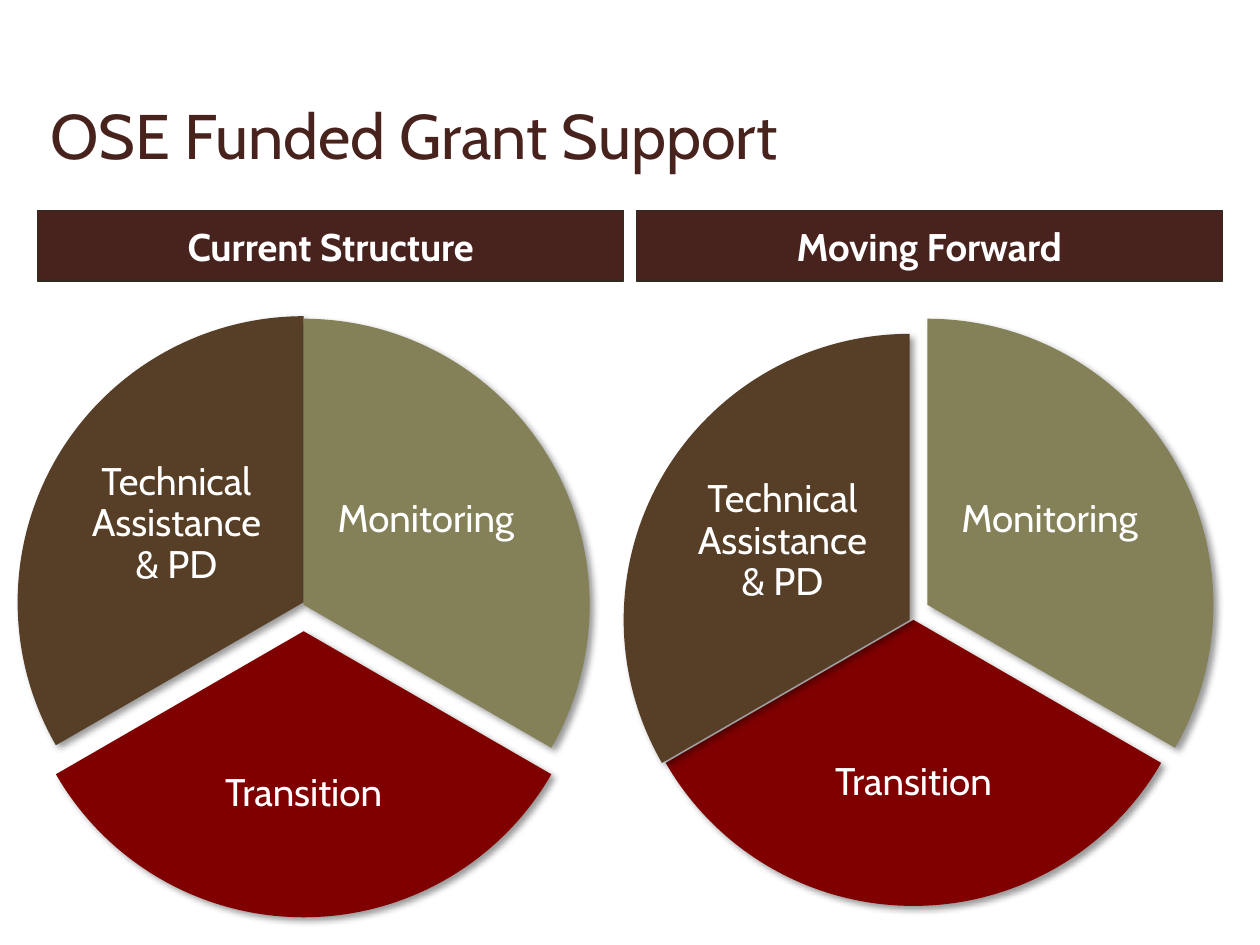
from math import cos, radians, sin, tan

from lxml.etree import SubElement
from pptx import Presentation
from pptx.dml.color import RGBColor
from pptx.enum.text import MSO_ANCHOR, PP_ALIGN
from pptx.oxml.ns import qn
from pptx.util import Inches, Pt

TITLE = "OSE Funded Grant Support"
FONT = "Cabin"
DARK, OUTLINE, WHITE = "48231E", "332A1F", "FFFFFF"
DIAMETER = 4.54
RADIUS = DIAMETER / 2
STEP = 60  # degrees covered by one curve; a sector has two

# label: fill, start angle, text margins (left, top, right, bottom) in the full circle's frame
SECTORS = {
    "Monitoring": ("848058", -90, (2.5, 0.87, 0.56, 2.22)),
    "Transition": ("800000", 30, (1.27, 2.89, 1.27, 0.3)),
    "Technical Assistance & PD": ("563E27", 150, (0.52, 0.92, 2.54, 2.16)),
}

# header, placeholder index, header left, sectors back to front with their circle's left and top
COLUMNS = [
    ("Current Structure", 1, 0.3, [
        ("Technical Assistance & PD", 0.14, 2.51),
        ("Transition", 0.14, 2.74),
        ("Monitoring", 0.14, 2.53),
    ]),
    ("Moving Forward", 3, 5.05, [
        ("Monitoring", 5.09, 2.53),
        ("Transition", 4.98, 2.65),
        ("Technical Assistance & PD", 4.95, 2.65),
    ]),
]


def color(value):
    return RGBColor.from_string(value)


def place(shape, left, top, width, height):
    shape.left, shape.top = Inches(left), Inches(top)
    shape.width, shape.height = Inches(width), Inches(height)


def write(shape, text, size, text_color, align, anchor, bold=False):
    frame = shape.text_frame
    frame.word_wrap = True
    frame.vertical_anchor = anchor
    para = frame.paragraphs[0]
    para.text = text
    para.alignment = align
    para.font.name = FONT
    para.font.size = Pt(size)
    para.font.bold = bold
    para.font.color.rgb = color(text_color)
    return para


def add_soft_shadow(shape):
    shape.shadow.inherit = False
    effects = shape._element.spPr.find(qn("a:effectLst"))
    shadow = SubElement(effects, qn("a:outerShdw"), blurRad=str(Pt(4)),
                        dist=str(Pt(3)), dir=str(45 * 60000), rotWithShape="0")
    black = SubElement(shadow, qn("a:srgbClr"), val="000000")
    SubElement(black, qn("a:alpha"), val="40000")


def rim_point(angle, bend=0):
    """Point on the circle, moved along its tangent by bend radii."""
    x, y = cos(radians(angle)), sin(radians(angle))
    return RADIUS * (1 + x - bend * y), RADIUS * (1 + y + bend * x)


def draw_outline(shape, start):
    """Replace the straight outline by a sector with true curves in the circle's frame."""
    outline = shape._element.spPr.find(".//" + qn("a:path"))
    outline.clear()
    outline.set("w", str(Inches(DIAMETER)))
    outline.set("h", str(Inches(DIAMETER)))

    def add(command, *points):
        element = SubElement(outline, qn(command))
        for x, y in points:
            SubElement(element, qn("a:pt"), x=str(Inches(x)), y=str(Inches(y)))

    bend = 4 / 3 * tan(radians(STEP / 4))
    add("a:moveTo", rim_point(start))
    for angle in (start, start + STEP):
        end = angle + STEP
        add("a:cubicBezTo", rim_point(angle, bend), rim_point(end, -bend), rim_point(end))
    add("a:lnTo", (RADIUS, RADIUS))
    add("a:close")


def add_sector(slide, label, left, top):
    fill, start, margins = SECTORS[label]
    builder = slide.shapes.build_freeform(Inches(left), Inches(top))
    builder.add_line_segments([(Inches(left + DIAMETER), Inches(top + DIAMETER))])
    sector = builder.convert_to_shape()
    draw_outline(sector, start)
    place(sector, left, top, DIAMETER, DIAMETER)
    sector.fill.solid()
    sector.fill.fore_color.rgb = color(fill)
    sector.line.fill.background()
    add_soft_shadow(sector)
    para = write(sector, label, 22, WHITE, PP_ALIGN.CENTER, MSO_ANCHOR.MIDDLE)
    para.line_spacing = 0.9
    frame = sector.text_frame
    (frame.margin_left, frame.margin_top,
     frame.margin_right, frame.margin_bottom) = map(Inches, margins)


def main():
    deck = Presentation()
    deck.slide_width, deck.slide_height = Inches(10), Inches(7.5)
    slide = deck.slides.add_slide(deck.slide_layouts.get_by_name("Comparison"))
    holders = {holder.placeholder_format.idx: holder for holder in slide.placeholders}

    title = slide.shapes.title
    place(title, 0.3, 0.25, 9.4, 1.17)
    para = write(title, TITLE, 36, DARK, PP_ALIGN.LEFT, MSO_ANCHOR.BOTTOM)
    para.space_before = Pt(4)

    for header, index, left, sectors in COLUMNS:
        box = holders[index]
        place(box, left, 1.67, 4.65, 0.56)
        box.fill.solid()
        box.fill.fore_color.rgb = color(DARK)
        box.line.color.rgb = color(OUTLINE)
        box.line.width = Pt(0.75)
        para = write(box, header, 22, WHITE, PP_ALIGN.CENTER, MSO_ANCHOR.MIDDLE, bold=True)
        para.space_before = Pt(6)
        for sector in sectors:
            add_sector(slide, *sector)

    used = {0} | {index for _, index, _, _ in COLUMNS}
    for index, holder in holders.items():
        if index not in used:
            holder._element.getparent().remove(holder._element)

    deck.save("out.pptx")


if __name__ == "__main__":
    main()
